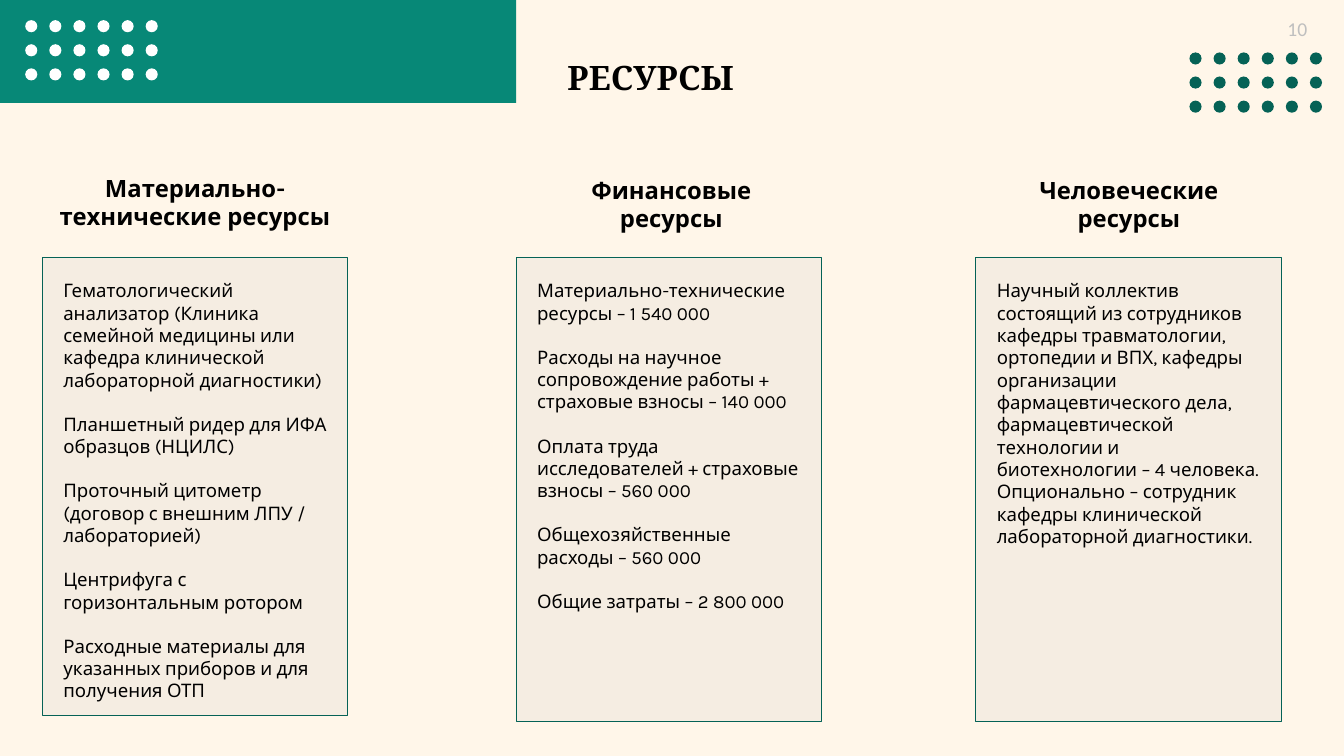
from dataclasses import dataclass

from lxml.etree import SubElement
from pptx import Presentation
from pptx.dml.color import RGBColor
from pptx.enum.shapes import MSO_SHAPE as Shape
from pptx.enum.text import PP_ALIGN as Align
from pptx.oxml.ns import qn
from pptx.slide import Slide
from pptx.util import Inches, Pt

# Grid of square cells, a tenth of an inch each
CELL = Inches(0.1)
COLUMNS, ROWS = 133.33, 75

CREAM, TEAL, DARK_TEAL = "FFF6E9", "078877", "056256"
BLACK, WHITE, GREY = "000000", "FFFFFF", "BFBFBF"

DOT_SIZE, DOT_PITCH = 1.2, 2.39
DOT_COLUMNS, DOT_ROWS = 6, 3

CARD_TOP, CARD_WIDTH = 25.5, 30.3
BODY_TOP, BODY_WIDTH, BODY_HEIGHT = 27.2, 28.2, 42.9
BODY_INSET = 1.1
BODY_SIZE, BODY_GAP = 13.3, 15.6


@dataclass
class Box:
    left: float
    top: float
    width: float
    height: float

    def emu(self) -> list[int]:
        return [round(v * CELL) for v in (self.left, self.top, self.width, self.height)]


@dataclass
class Style:
    font: str
    size: float
    color: str = BLACK
    bold: bool = False
    align: Align = Align.LEFT
    gap: float = 0


@dataclass
class Resource:
    heading: str
    heading_box: Box
    left: float
    height: float
    items: list[str]
    gap: float = BODY_GAP


RESOURCES = [
    Resource("Материально-технические ресурсы", Box(4.7, 16.7, 29.3, 4), 4.2, 45.5, [
        "Гематологический анализатор (Клиника семейной медицины или кафедра "
        "клинической лабораторной диагностики)",
        "Планшетный ридер для ИФА образцов (НЦИЛС)",
        "Проточный цитометр (договор с внешним ЛПУ / лабораторией)",
        "Центрифуга с горизонтальным ротором",
        "Расходные материалы для указанных приборов и для получения ОТП",
    ]),
    Resource("Финансовые ресурсы", Box(52.5, 16.9, 28.2, 4), 51.2, 46.1, [
        "Материально-технические ресурсы – 1 540 000",
        "Расходы на научное сопровождение работы + страховые взносы – 140 000",
        "Оплата труда исследователей + страховые взносы – 560 000",
        "Общехозяйственные расходы – 560 000",
        "Общие затраты – 2 800 000",
    ]),
    Resource("Человеческие ресурсы", Box(97.9, 16.9, 28.2, 4), 96.8, 46.1, [
        "Научный коллектив состоящий из сотрудников кафедры травматологии, "
        "ортопедии и ВПХ, кафедры организации фармацевтического дела, "
        "фармацевтической технологии и биотехнологии – 4 человека.",
        "Опционально – сотрудник кафедры клинической лабораторной диагностики.",
    ], gap=0),
]

TITLE = Style("Cambria", 24, bold=True)
PAGE_NUMBER = Style("Calibri", 14, GREY, align=Align.CENTER)
HEADING = Style("Karla", 17, bold=True, align=Align.CENTER)


def rgb(color: str) -> RGBColor:
    return RGBColor.from_string(color)


def add_shape(shapes, kind: Shape, box: Box, fill: str):
    sp = shapes.add_shape(kind, *box.emu())
    sp.shadow.inherit = False
    sp.fill.solid()
    sp.fill.fore_color.rgb = rgb(fill)
    sp.line.fill.background()
    return sp


def add_text(s: Slide, box: Box, lines: list[str], style: Style) -> None:
    tf = s.shapes.add_textbox(*box.emu()).text_frame
    tf.word_wrap = True
    tf.text = "\n".join(lines)
    for p in tf.paragraphs:
        p.alignment = style.align
        p.space_after = Pt(style.gap)
        for r in p.runs:
            r.font.name = style.font
            r.font.size = Pt(style.size)
            r.font.bold = style.bold
            r.font.color.rgb = rgb(style.color)


def add_dots(s: Slide, left: float, top: float, color: str) -> None:
    group = s.shapes.add_group_shape()
    for row in range(DOT_ROWS):
        for column in range(DOT_COLUMNS):
            dot = Box(left + column * DOT_PITCH, top + row * DOT_PITCH, DOT_SIZE, DOT_SIZE)
            add_shape(group.shapes, Shape.OVAL, dot, color)


def add_card(s: Slide, box: Box) -> None:
    sp = add_shape(s.shapes, Shape.RECTANGLE, box, GREY)
    sp.line.color.rgb = rgb(DARK_TEAL)
    sp.line.width = Pt(0.75)
    # Make the fill 15 % opaque
    fill_color = sp.fill._xPr.find(qn("a:solidFill"))[0]
    SubElement(fill_color, qn("a:alpha"), val="15000")


def add_resource(s: Slide, resource: Resource) -> None:
    add_text(s, resource.heading_box, [resource.heading], HEADING)
    add_card(s, Box(resource.left, CARD_TOP, CARD_WIDTH, resource.height))
    body = Box(resource.left + BODY_INSET, BODY_TOP, BODY_WIDTH, BODY_HEIGHT)
    add_text(s, body, resource.items, Style("Karla", BODY_SIZE, gap=resource.gap))


def main() -> None:
    prs = Presentation()
    prs.slide_width, prs.slide_height = round(COLUMNS * CELL), ROWS * CELL
    s = prs.slides.add_slide(prs.slide_layouts[6])
    s.background.fill.solid()
    s.background.fill.fore_color.rgb = rgb(CREAM)

    # Header band, dot patterns, title and page number
    add_shape(s.shapes, Shape.RECTANGLE, Box(0, 0, 51.2, 10.2), TEAL)
    add_dots(s, 118, 5.2, DARK_TEAL)
    add_dots(s, 2.5, 2, WHITE)
    add_text(s, Box(55.3, 5.2, 20.8, 5), ["РЕСУРСЫ"], TITLE)
    add_text(s, Box(125.1, 1.2, 7.2, 2.7), ["10"], PAGE_NUMBER)

    # Three resource columns
    for resource in RESOURCES:
        add_resource(s, resource)

    prs.save("out.pptx")


if __name__ == "__main__":
    main()
